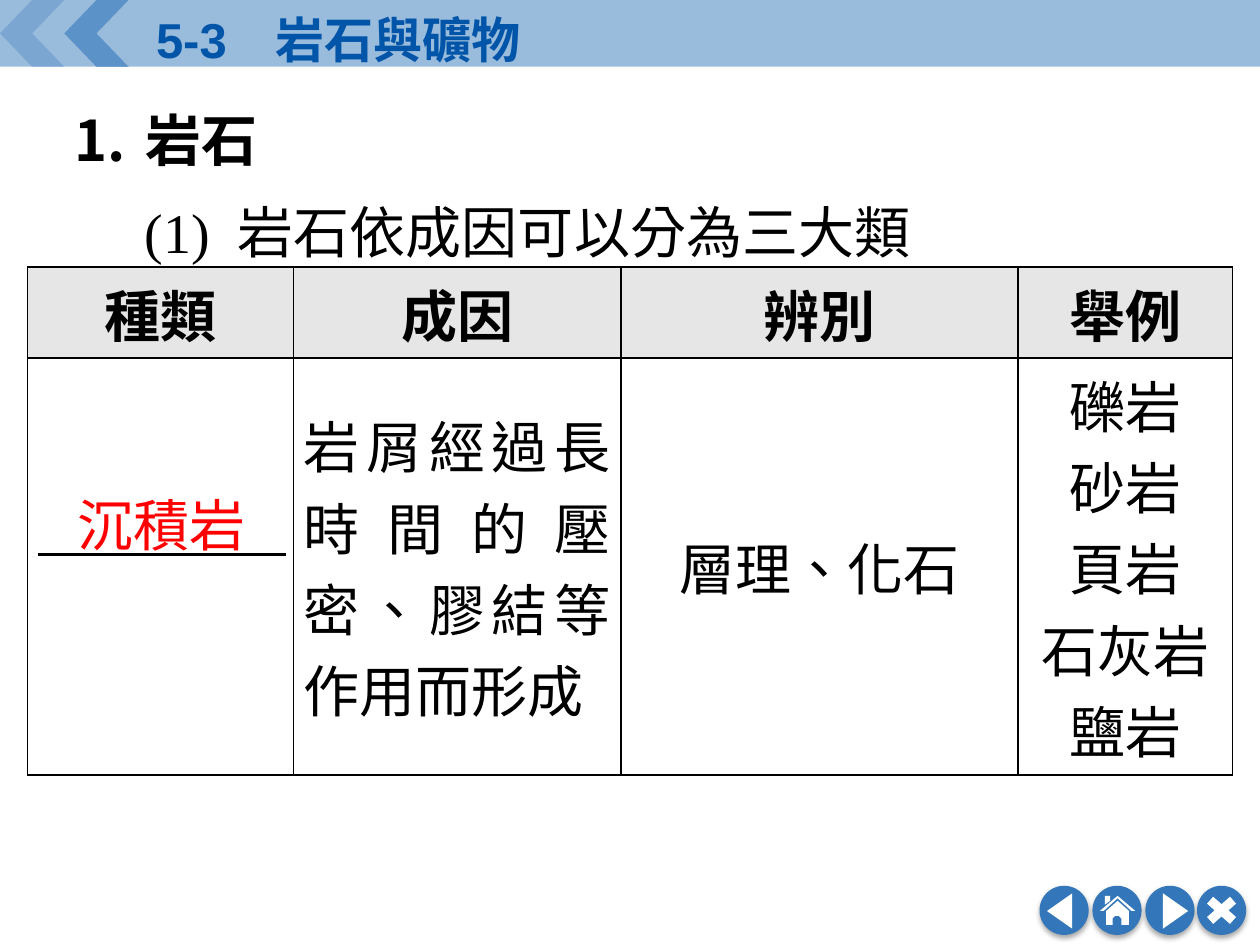
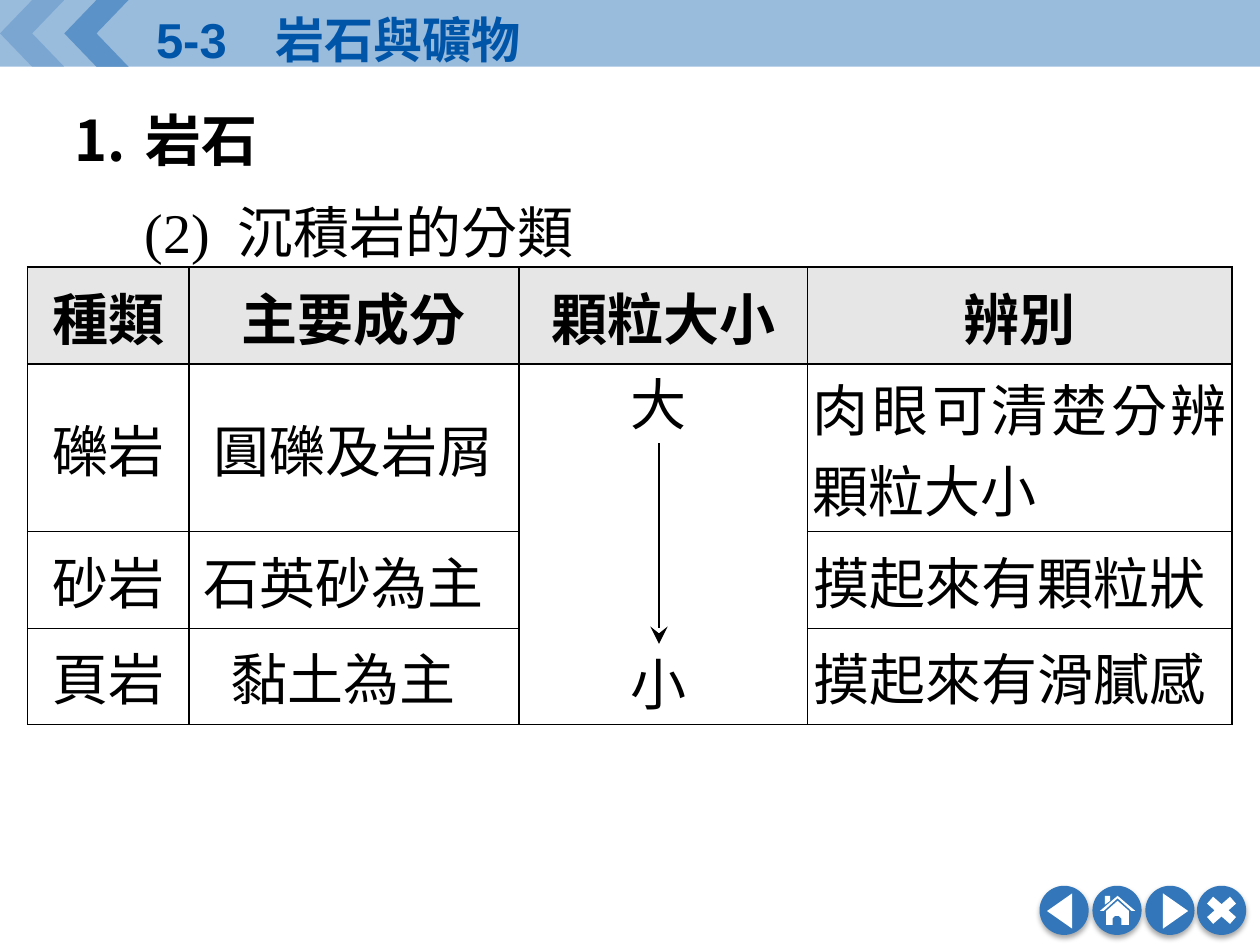
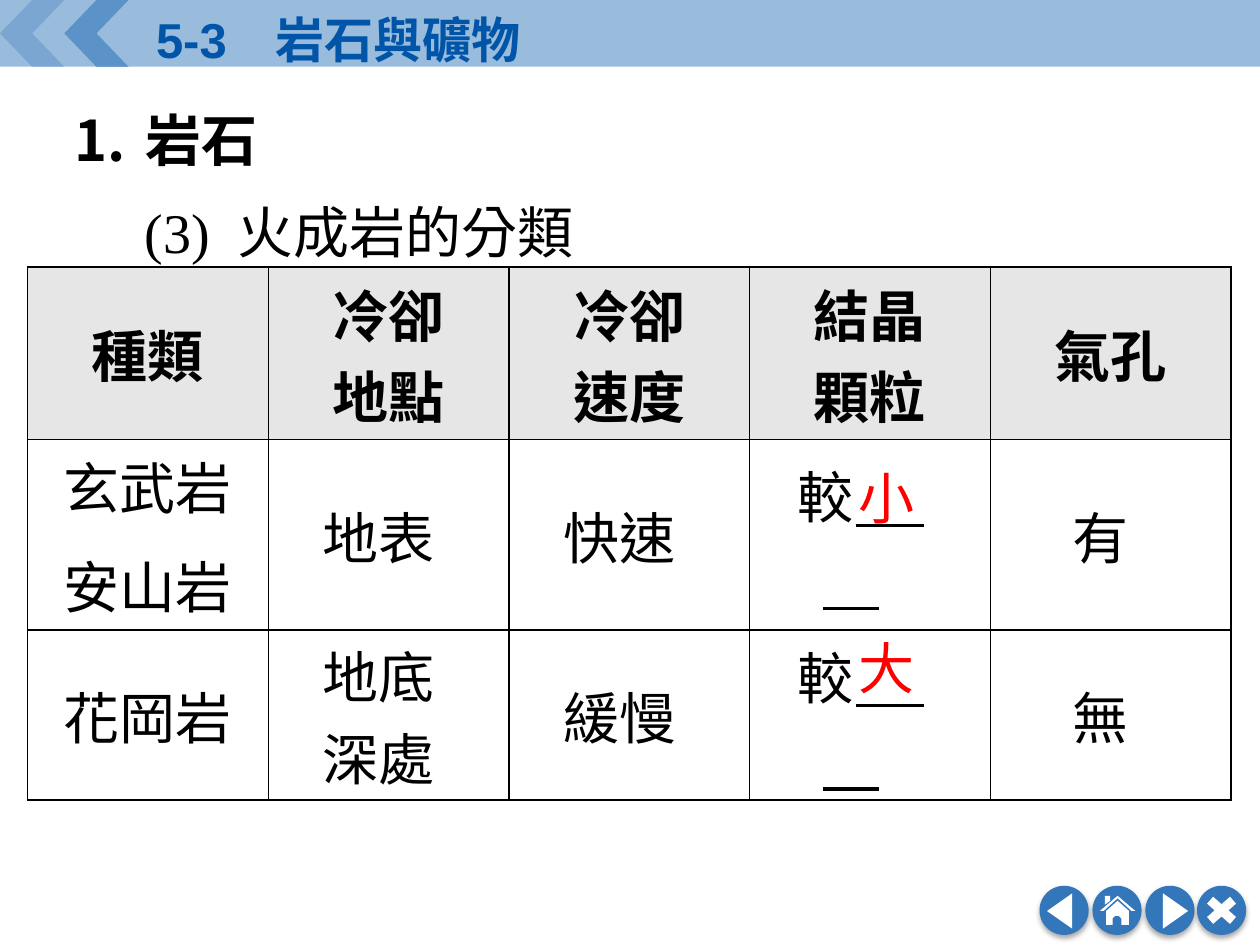
from lxml import etree
from pptx import Presentation
from pptx.dml.color import RGBColor
from pptx.enum.shapes import MSO_CONNECTOR, MSO_SHAPE as Preset
from pptx.enum.text import MSO_ANCHOR as Anchor, PP_ALIGN as Align
from pptx.oxml import parse_xml
from pptx.oxml.ns import nsdecls, qn
from pptx.util import Inches, Pt

BLUE, BUTTON, BLACK, WHITE, RED, GREY = "0055A9", "3377BA", "000000", "FFFFFF", "FF0000", "E6E6E6"
SERIF = "Times New Roman"
HEADER = "5-3　岩石與礦物"
SECTION = "岩石"
TABLE_LEFT, TABLE_TOP = 0.22, 2.12
CELL_MARGIN, SHIFTED_MARGIN, BLANK_LINE = 0.08, 0.2, 0.64

SLIDES = [
    {
        "topic": "(1)\t岩石依成因可以分為三大類",
        "columns": [2.11, 2.6, 3.15, 1.7],
        "rows": [0.72, 3.31],
        "cells": [
            ["種類", "成因", "辨別", "舉例"],
            ["", "岩屑經過長時間的壓密、膠結等作用而形成", "層理、化石",
             "礫岩\n砂岩\n頁岩\n石灰岩\n鹽岩"],
        ],
        "justified": [(1, 1)],
        "lines": [(0.3, 2.27, 4.4)],
        "labels": [("沉積岩", 0.43, 3.84, 1.7, RED)],
    },
    {
        "topic": "(2)\t沉積岩的分類",
        "columns": [1.28, 2.62, 2.29, 3.37],
        "rows": [0.77, 1.33, 0.77, 0.76],
        "cells": [
            ["種類", "主要成分", "顆粒大小", "辨別"],
            ["礫岩", "圓礫及岩屑", "", "肉眼可清楚分辨顆粒大小"],
            ["砂岩", "石英砂為主", "", "摸起來有顆粒狀"],
            ["頁岩", "黏土為主", "", "摸起來有滑膩感"],
        ],
        "justified": [(1, 3)],
        "narrow": [(1, 3)],
        "shifted": [(2, 1), (3, 1), (2, 3), (3, 3)],
        "merge": ((1, 2), (3, 2)),
        "labels": [("大", 4.9, 2.88, 0.66, BLACK), ("小", 4.9, 5.11, 0.66, BLACK)],
        "arrow": True,
    },
    {
        "topic": "(3)\t火成岩的分類",
        "columns": [1.91] * 5,
        "rows": [1.37, 1.51, 1.35],
        "cells": [
            ["種類", "冷卻\v地點", "冷卻\v速度", "結晶\v顆粒", "氣孔"],
            ["玄武岩\n安山岩", "地表", "快速", "較", "有"],
            ["花岡岩", "地底\v深處", "緩慢", "較", "無"],
        ],
        "shifted": [(row, column) for row in (1, 2) for column in (1, 2, 4)],
        "blanks": [(1, 3), (2, 3)],
        "gap": 10,
        "lines": [(left, right, top + drop) for drop in (0, 1.43)
                  for left, right, top in ((6.79, 7.33, 4.17), (6.53, 6.98, 4.83))],
        "labels": [("小", 6.47, 3.63, 1.14, RED), ("大", 6.47, 4.98, 1.14, RED)],
    },
]

CHEVRONS = [(0, 20), (0.51, 40)]
BUTTONS = [
    (8.25, Preset.ISOSCELES_TRIANGLE, (0.02, 0.1, 0.28, 0.2), 270),
    (8.67, None, None, 0),
    (9.09, Preset.ISOSCELES_TRIANGLE, (0.1, 0.1, 0.28, 0.2), 90),
    (9.5, Preset.MATH_MULTIPLY, (0.02, 0.04, 0.35, 0.31), 0),
]
BUTTON_TOP, BUTTON_SIZE = 7.03, 0.39
HOUSE = [
    [(887, 715), (896, 723), (896, 734), (890, 734), (890, 729), (888, 727), (885, 727),
     (883, 729), (883, 734), (878, 734), (878, 723)],
    [(877, 711), (881, 711), (881, 715), (877, 718)],
    [(887, 711), (901, 723), (898, 723), (887, 713)],
    [(887, 711), (887, 713), (876, 723), (873, 723)],
]


def color(value):
    return RGBColor.from_string(value)


def inches(*values):
    return [Inches(value) for value in values]


def apply(target, formats):
    for name, value in formats.items():
        setattr(target, name, value)


def paint(shape, fill, alpha=100):
    shape.shadow.inherit = False
    shape.fill.solid()
    shape.fill.fore_color.rgb = color(fill)
    shape.line.fill.background()
    if alpha < 100:
        node = shape._element.spPr.find(qn("a:solidFill"))[0]
        etree.SubElement(node, qn("a:alpha"), val=str(alpha * 1000))


def add_preset(slide, preset, box, fill, alpha=100, rotation=0):
    shape = slide.shapes.add_shape(preset, *inches(*box))
    shape.rotation = rotation
    paint(shape, fill, alpha)
    return shape


def write(paragraph, text, size=32, name=SERIF, bold=False, fill=BLACK, align=Align.CENTER):
    paragraph.text = text
    paragraph.alignment = align
    paragraph._p.get_or_add_pPr().set("hangingPunct", "0")
    for run in paragraph.runs:
        apply(run.font, {"size": Pt(size), "name": name, "bold": bold})
        run.font.color.rgb = color(fill)
        run._r.get_or_add_rPr().set("lang", "zh-TW")


def add_text(slide, box):
    textbox = slide.shapes.add_textbox(*inches(*box))
    textbox.text_frame.word_wrap = True
    return textbox


def add_line(slide, start, end, width):
    line = slide.shapes.add_connector(MSO_CONNECTOR.STRAIGHT, *inches(*start, *end))
    line.line.color.rgb = color(BLACK)
    line.line.width = Pt(width)
    etree.SubElement(line._element.spPr, qn("a:effectLst"))
    return line


def add_button(slide, left, preset, symbol, rotation):
    disc = add_preset(slide, Preset.OVAL, (left, BUTTON_TOP, BUTTON_SIZE, BUTTON_SIZE), BUTTON)
    shadow = parse_xml(
        f'<a:outerShdw {nsdecls("a")} blurRad="{Pt(3.1)}" dist="{Pt(1.8)}" dir="5400000" '
        f'rotWithShape="0"><a:srgbClr val="{BLACK}"><a:alpha val="35000"/></a:srgbClr></a:outerShdw>')
    disc._element.spPr.find(qn("a:effectLst")).append(shadow)
    if preset is None:
        builder = slide.shapes.build_freeform(*HOUSE[0][0], scale=Inches(0.01))
        for outline in HOUSE:
            builder.move_to(*outline[0])
            builder.add_line_segments(outline[1:], close=True)
        paint(builder.convert_to_shape(), WHITE)
    else:
        x, y, width, height = symbol
        add_preset(slide, preset, (left + x, BUTTON_TOP + y, width, height), WHITE, rotation=rotation)


def add_frame(slide):
    add_preset(slide, Preset.RECTANGLE, (0, 0, 10, 0.53), BLUE, 40)
    for left, alpha in CHEVRONS:
        add_preset(slide, Preset.CHEVRON, (left, 0, 0.51, 0.53), BLUE, alpha, 180)
    for button in BUTTONS:
        add_button(slide, *button)
    title = add_text(slide, (1.14, 0.03, 4.33, 0.57))
    write(title.text_frame.paragraphs[0], HEADER, 28, "Arial", True, BLUE, Align.LEFT)


def add_outline(slide, topic):
    frame = add_text(slide, (0.49, 0.68, 8.94, 0.64)).text_frame
    section, detail = frame.paragraphs[0], frame.add_paragraph()
    write(section, SECTION, bold=True, align=Align.JUSTIFY)
    write(detail, topic, align=Align.JUSTIFY)
    section.space_after = Pt(6.4)
    for paragraph, margin, indent in ((section, 0.57, -0.57), (detail, 1.3, -0.74)):
        paragraph.line_spacing = 1.2
        properties = paragraph._p.get_or_add_pPr()
        properties.set("marL", str(Inches(margin)))
        properties.set("indent", str(Inches(indent)))
    properties = section._p.get_or_add_pPr()
    etree.SubElement(properties, qn("a:buFont"), typeface="+mj-ea")
    etree.SubElement(properties, qn("a:buAutoNum"), type="arabicPeriod")


def add_borders(cell):
    properties = cell._tc.get_or_add_tcPr()
    for index, side in enumerate(("lnL", "lnR", "lnT", "lnB")):
        properties.insert(index, parse_xml(
            f'<a:{side} {nsdecls("a")} w="{Pt(1)}"><a:solidFill><a:srgbClr val="{BLACK}"/>'
            f'</a:solidFill></a:{side}>'))


def cell_margins(place, content):
    margins = {"left": CELL_MARGIN, "right": CELL_MARGIN, "top": 0.04, "bottom": 0.04}
    special = {
        "narrow": {"left": 0.04, "right": 0.04, "top": 0, "bottom": 0},
        "shifted": {"left": 0.04, "right": SHIFTED_MARGIN, "top": 0, "bottom": 0},
        "blanks": {"left": 0.38, "top": 0, "bottom": BLANK_LINE},
    }
    for kind, values in special.items():
        if place in content.get(kind, []):
            margins.update(values)
    return {f"margin_{side}": Inches(value) for side, value in margins.items()}


def fill_cell(cell, text, place, content):
    header = place[0] == 0
    align = Align.CENTER
    if place in content.get("justified", []):
        align = Align.JUSTIFY
    elif place in content.get("blanks", []):
        align = Align.LEFT
    apply(cell, cell_margins(place, content))
    cell.vertical_anchor = Anchor.MIDDLE
    if header:
        cell.fill.solid()
        cell.fill.fore_color.rgb = color(GREY)
    else:
        cell.fill.background()
    add_borders(cell)
    if not text:
        return
    lines = text.split("\n")
    for index, line in enumerate(lines):
        paragraph = cell.text_frame.add_paragraph() if index else cell.text_frame.paragraphs[0]
        write(paragraph, line, bold=header, align=align)
        if index < len(lines) - 1:
            paragraph.space_after = Pt(content.get("gap", 0))


def add_grid(slide, content):
    columns, rows = content["columns"], content["rows"]
    box = inches(TABLE_LEFT, TABLE_TOP, sum(columns), sum(rows))
    table = slide.shapes.add_table(len(rows), len(columns), *box).table
    apply(table, {"first_row": False, "horz_banding": False})
    for column, width in zip(table.columns, columns):
        column.width = Inches(width)
    for row, height in zip(table.rows, rows):
        row.height = Inches(height)
    for row, texts in enumerate(content["cells"]):
        for column, text in enumerate(texts):
            fill_cell(table.cell(row, column), text, (row, column), content)
    if "merge" in content:
        first, last = content["merge"]
        table.cell(*first).merge(table.cell(*last))


def add_slide(presentation, content):
    slide = presentation.slides.add_slide(presentation.slide_layouts[6])
    add_frame(slide)
    add_outline(slide, content["topic"])
    add_grid(slide, content)
    for left, right, top in content.get("lines", []):
        add_line(slide, (left, top), (right, top), 2)
    labels = []
    for text, left, top, width, fill in content["labels"]:
        label = add_text(slide, (left, top, width, 0.64))
        write(label.text_frame.paragraphs[0], text, fill=fill)
        labels.append(label)
    if content.get("arrow"):
        arrow = add_line(slide, (5.23, 3.52), (5.23, 5.11), 1.5)
        arrow.begin_connect(labels[0], 2)
        arrow.end_connect(labels[1], 0)
        etree.SubElement(arrow.line._get_or_add_ln(), qn("a:tailEnd"),
                         type="stealth", w="lg", len="lg")


def main():
    presentation = Presentation()
    apply(presentation, {"slide_width": Inches(10), "slide_height": Inches(7.5)})
    for content in SLIDES:
        add_slide(presentation, content)
    presentation.save("out.pptx")


if __name__ == "__main__":
    main()
